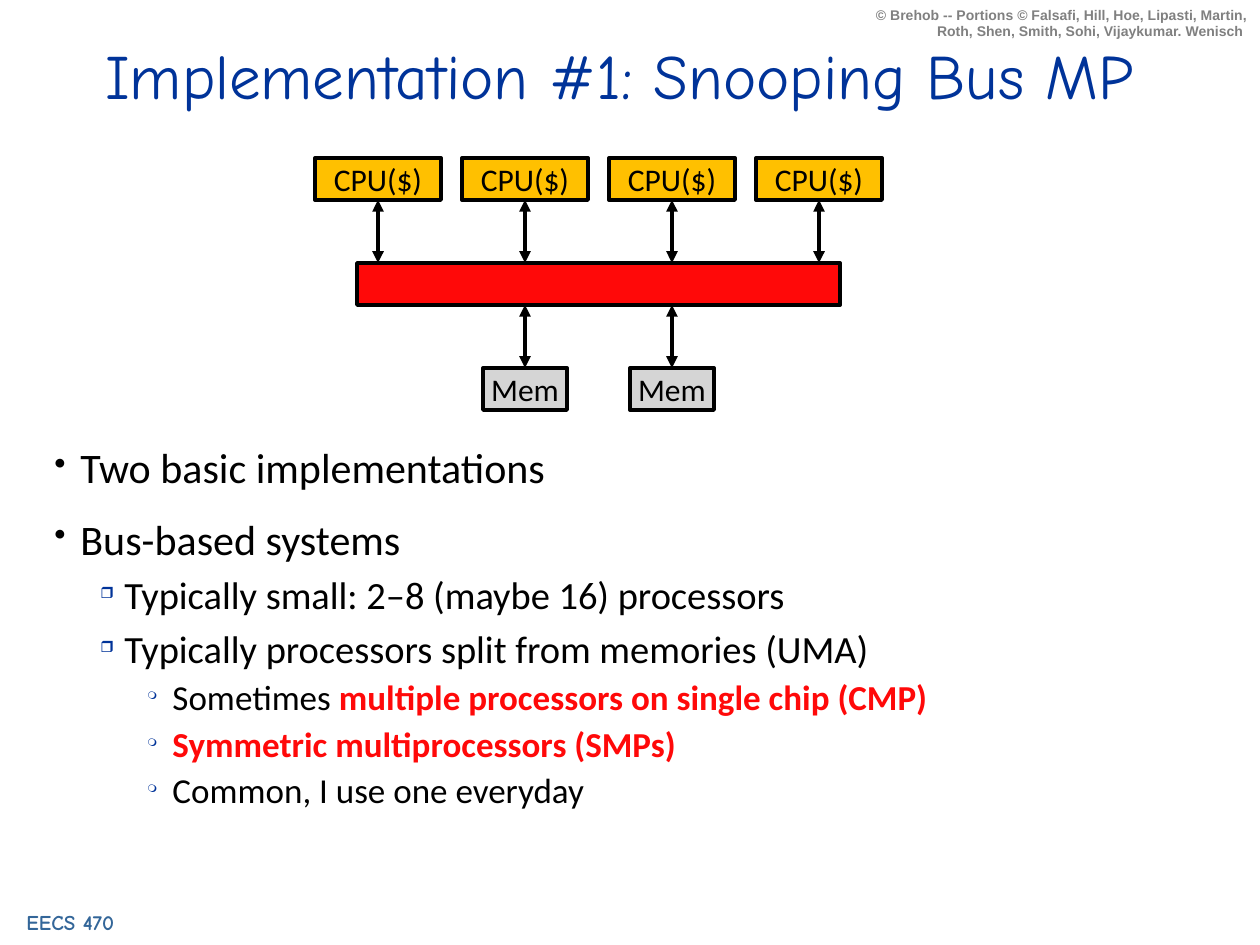
from dataclasses import dataclass

from lxml.etree import SubElement
from pptx import Presentation
from pptx.dml.color import RGBColor
from pptx.enum.shapes import MSO_CONNECTOR, MSO_SHAPE
from pptx.enum.text import MSO_ANCHOR, PP_ALIGN
from pptx.oxml.ns import qn
from pptx.util import Pt

SCALE = 914400 / 126


@dataclass(frozen=True)
class Theme:
    title_font: str = "Comic Neue"
    body_font: str = "Calibri"
    credit_font: str = "Arial"
    navy: str = "003399"
    steel: str = "336699"
    grey: str = "808080"
    black: str = "000000"
    red: str = "FF0909"
    amber: str = "FFC000"
    silver: str = "D5D5D5"
    title_size: int = 36
    box_size: int = 18
    footer_size: int = 12
    credit_size: int = 8
    line_width: float = 2.25


T = Theme()

LEVELS = [
    dict(size=24, before=15, left=26, hang=26, char="•", pct=80, color=T.black),
    dict(size=22, before=7, left=70, hang=24, char="❒", pct=40, color=T.navy),
    dict(size=20, before=5, left=118, hang=25, char="❍", pct=30, color=T.navy),
]

BULLETS = [
    (0, [("Two basic implementations", False)]),
    (0, [("Bus-based systems", False)]),
    (1, [("Typically small: 2–8 (maybe 16) processors", False)]),
    (1, [("Typically processors split from memories (UMA)", False)]),
    (2, [("Sometimes ", False), ("multiple processors on single chip (CMP)", True)]),
    (2, [("Symmetric multiprocessors (SMPs)", True)]),
    (2, [("Common, I use one everyday", False)]),
]


def px(n):
    return round(n * SCALE)


def set_attrs(obj, **values):
    for name, value in values.items():
        setattr(obj, name, value)


def add_run(p, text, font, size, color, bold=False):
    r = p.add_run()
    r.text = text
    set_attrs(r.font, name=font, size=Pt(size), bold=bold)
    r.font.color.rgb = RGBColor.from_string(color)


def add_text(s, box):
    tf = s.shapes.add_textbox(*map(px, box)).text_frame
    tf.word_wrap = True
    return tf


def add_title(s, box, text):
    sp = s.shapes.title
    set_attrs(sp, **dict(zip(("left", "top", "width", "height"), map(px, box))))
    tf = sp.text_frame
    set_attrs(tf, word_wrap=True, vertical_anchor=MSO_ANCHOR.MIDDLE)
    p = tf.paragraphs[0]
    p.alignment = PP_ALIGN.CENTER
    add_run(p, text, T.title_font, T.title_size, T.navy)


def add_label(s, box, text, align, *style):
    p = add_text(s, box).paragraphs[0]
    p.alignment = align
    add_run(p, text, *style, bold=True)


def add_block(s, box, fill, text=""):
    sp = s.shapes.add_shape(MSO_SHAPE.RECTANGLE, *map(px, box))
    sp.shadow.inherit = False
    sp.fill.solid()
    sp.fill.fore_color.rgb = RGBColor.from_string(fill)
    sp.line.color.rgb = RGBColor.from_string(T.black)
    sp.line.width = Pt(T.line_width)
    if text:
        tf = sp.text_frame
        set_attrs(tf, word_wrap=False, vertical_anchor=MSO_ANCHOR.MIDDLE)
        p = tf.paragraphs[0]
        p.alignment = PP_ALIGN.CENTER
        add_run(p, text, T.body_font, T.box_size, T.black)


def add_arrow(s, x, top, bottom):
    cx = s.shapes.add_connector(MSO_CONNECTOR.STRAIGHT, px(x), px(bottom), px(x), px(top))
    cx.line.color.rgb = RGBColor.from_string(T.black)
    cx.line.width = Pt(T.line_width)
    ln = cx.line._get_or_add_ln()
    for end in ("a:headEnd", "a:tailEnd"):
        SubElement(ln, qn(end), type="triangle")
    SubElement(cx._element.spPr, qn("a:effectLst"))


def add_bus_diagram(s, box):
    left, top, width, height = box
    cpu_w, mem_w, block_h, cpus = 126, 84, 42, 4
    pitch = (width - cpu_w) // (cpus - 1)
    bus_top = top + (height - block_h) // 2
    mem_top = top + height - block_h
    for i in range(cpus):
        x = left + i * pitch
        center = x + cpu_w // 2
        add_block(s, (x, top, cpu_w, block_h), T.amber, "CPU($)")
        add_arrow(s, center, top + block_h, bus_top)
        if i in (1, 2):
            add_block(s, (center - mem_w // 2, mem_top, mem_w, block_h), T.silver, "Mem")
            add_arrow(s, center, bus_top + block_h, mem_top)
    add_block(s, (left + 42, bus_top, width - 84, block_h), T.red)


def add_bullets(s, box, items):
    tf = add_text(s, box)
    for i, (level, runs) in enumerate(items):
        p = tf.add_paragraph() if i else tf.paragraphs[0]
        lv = LEVELS[level]
        set_attrs(p, level=level, line_spacing=0.9, space_before=Pt(lv["before"]))
        pPr = p._p.get_or_add_pPr()
        pPr.set("marL", str(px(lv["left"])))
        pPr.set("indent", str(-px(lv["hang"])))
        SubElement(SubElement(pPr, qn("a:buClr")), qn("a:srgbClr"), val=lv["color"])
        SubElement(pPr, qn("a:buSzPct"), val=str(lv["pct"] * 1000))
        SubElement(pPr, qn("a:buChar"), char=lv["char"])
        for text, strong in runs:
            add_run(p, text, T.body_font, lv["size"], T.red if strong else T.black, strong)


def main():
    prs = Presentation()
    set_attrs(prs, slide_width=px(1260), slide_height=px(945))
    s = prs.slides.add_slide(prs.slide_layouts[5])
    add_label(s, (-10, 903, 168, 38), "EECS 470 ", PP_ALIGN.CENTER,
              T.title_font, T.footer_size, T.steel)
    add_label(s, (861, 0, 399, 47),
              "© Brehob -- Portions © Falsafi, Hill, Hoe, Lipasti, Martin, "
              "Roth, Shen, Smith, Sohi, Vijaykumar. Wenisch ",
              PP_ALIGN.RIGHT, T.credit_font, T.credit_size, T.grey)
    add_title(s, (47, 32, 1166, 84), "Implementation #1: Snooping Bus MP ")
    add_bullets(s, (42, 441, 1176, 420), BULLETS)
    add_bus_diagram(s, (315, 158, 567, 252))
    prs.save("out.pptx")


if __name__ == "__main__":
    main()
